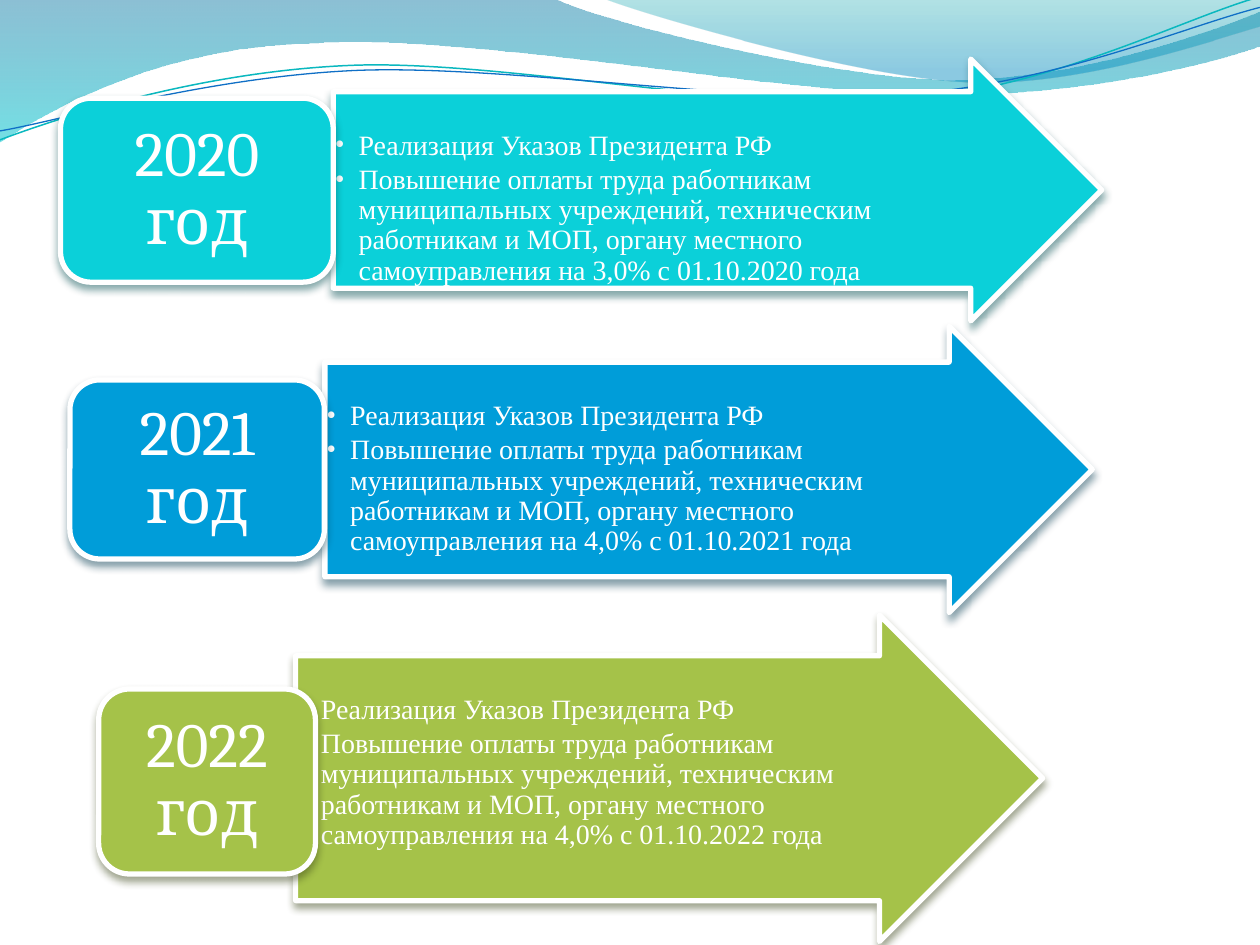
import pptx
import pptx.util
import pptx.dml.color
import pptx.enum.shapes
import pptx.enum.text
import pptx.oxml.ns
import lxml.etree

Cm, Pt = pptx.util.Cm, pptx.util.Pt
RGBColor = pptx.dml.color.RGBColor
SHAPE = pptx.enum.shapes.MSO_SHAPE
ALIGN, ANCHOR = pptx.enum.text.PP_ALIGN, pptx.enum.text.MSO_ANCHOR
qn = pptx.oxml.ns.qn
sub = lxml.etree.SubElement

WHITE = RGBColor(0xFF, 0xFF, 0xFF)
CYAN, CYAN_SHADOW = RGBColor(0x0B, 0xD0, 0xD9), RGBColor(0x02, 0x4B, 0x4E)
BLUE, BLUE_SHADOW = RGBColor(0x00, 0x9D, 0xD9), RGBColor(0x00, 0x37, 0x4C)
GREEN, GREEN_SHADOW = RGBColor(0xA5, 0xC2, 0x49), RGBColor(0x3A, 0x45, 0x19)
WAVE_BLUE, WAVE_AQUA = RGBColor(0x00, 0x74, 0xA1), RGBColor(0x00, 0xC6, 0xCF)
CREST_TEAL, CREST_BLUE = RGBColor(0x00, 0xA1, 0xA9), RGBColor(0x00, 0x8B, 0xBF)
LINE_TEAL, LINE_BLUE = RGBColor(0x0A, 0xB8, 0xBF), RGBColor(0x0F, 0x6F, 0xC6)

prs = pptx.Presentation()
prs.slide_width, prs.slide_height = Cm(25.4), Cm(19.05)
s = prs.slides.add_slide(prs.slide_layouts[6])


def add_wave(start, segments, close):
    """Outline in cm: a pair is a straight line, six numbers a Bezier curve."""
    pts = [(Cm(x), Cm(y)) for seg in segments for x, y in zip(seg[::2], seg[1::2])]
    fb = s.shapes.build_freeform(Cm(start[0]), Cm(start[1]))
    fb.add_line_segments(pts, close=close)
    sp = fb.convert_to_shape()
    sp.shadow.inherit = False
    # Join the three points of each curve into one Bezier command
    steps = iter(list(sp._element.spPr.iter(qn("a:lnTo"))))
    for seg in segments:
        step = next(steps)
        if len(seg) == 6:
            step.addprevious(curve := lxml.etree.Element(qn("a:cubicBezTo")))
            for point in (step, next(steps), next(steps)):
                curve.append(point[0])
                point.getparent().remove(point)
    return sp


def add_block(kind, box, color, shadow, frame):
    """Filled preset shape with a white outline, a soft shadow and a text frame."""
    sp = s.shapes.add_shape(kind, *[Cm(v) for v in box])
    sp.fill.solid()
    sp.fill.fore_color.rgb = color
    sp.line.color.rgb = WHITE
    sp.line.width = Pt(3)
    sp.shadow.inherit = False
    effects = sp._element.spPr.find(qn("a:effectLst"))
    outer = sub(effects, qn("a:outerShdw"), blurRad=str(Pt(4.5)), dist=str(Pt(3)),
                dir="5400000", rotWithShape="0")
    clr = sub(outer, qn("a:srgbClr"), val=str(shadow))
    sub(clr, qn("a:alpha"), val="48000")
    tf = sp.text_frame
    for name, value in frame.items():
        setattr(tf, name, value)
    return sp


# Translucent waves across the top
waves = [
    ((0, 0), [(11.18, -0.03), (12.09, 0.43, 16.87, 1.6, 19.25, 1.6),
              (21.67, 1.6, 24.33, 0.66, 25.4, 0.23), (25.43, 0.91),
              (24.97, 1.12, 22.1, 1.93, 18.95, 1.91),
              (15.8, 1.91, 9.7, 0.71, 6.53, 0.86),
              (3.28, 0.91, 1.17, 2.11, -0.03, 2.87)],
     [(0, WAVE_BLUE, 45), (1, WAVE_AQUA, 55)]),
    ((12.17, -0.03), [(12.93, 0.28, 17.32, 1.57, 19.53, 1.65),
                      (21.74, 1.75, 24.41, 0.81, 25.4, 0.53), (25.4, 0)],
     [(0, CREST_TEAL, 30), (0.8, CREST_BLUE, 45)]),
]
for start, segments, stops in waves:
    sp = add_wave(start, segments, True)
    sp.line.fill.background()
    sp.fill.gradient()
    sp.fill.gradient_angle = 270
    for stop, (pos, color, _) in zip(sp.fill.gradient_stops, stops):
        stop.position = pos
        stop.color.rgb = color
    for clr, (_, _, opacity) in zip(sp._element.spPr.iter(qn("a:srgbClr")), stops):
        sub(clr, qn("a:alpha"), val=str(opacity * 1000))

# Thin wavy lines
lines = [
    ((0, 2.82), [(1.22, 2.36, 4.01, 1.45, 7.04, 1.32),
                 (10.03, 1.19, 15.06, 2.26, 18.11, 2.03),
                 (21.16, 1.8, 23.83, 0.38, 25.35, -0.05)], LINE_TEAL, 0.85),
    ((0, 2.64), [(1.19, 2.44, 4.17, 1.55, 7.19, 1.42),
                 (10.24, 1.3, 15.19, 2.13, 18.21, 1.91),
                 (21.23, 1.7, 23.9, 0.53, 25.4, 0.15)], LINE_BLUE, 0.75),
]
for start, segments, color, width in lines:
    sp = add_wave(start, segments, False)
    sp.fill.background()
    sp.line.color.rgb = color
    sp.line.width = Pt(width)

# One arrow with measures and one year label per row
rows = [
    (2020, "3,0%", CYAN, CYAN_SHADOW, (6.72, 1.19, 15.49, 5.28), (1.22, 1.98, 5.5, 3.71)),
    (2021, "4,0%", BLUE, BLUE_SHADOW, (6.55, 6.58, 15.47, 5.77), (1.41, 7.66, 5.13, 3.61)),
    (2022, "4,0%", GREEN, GREEN_SHADOW, (5.96, 12.4, 15.06, 6.58), (1.99, 13.89, 4.37, 3.73)),
]
arrow_frame = {"word_wrap": True, "vertical_anchor": ANCHOR.TOP, "margin_left": Cm(0.03),
               "margin_right": Cm(0.03), "margin_top": Cm(0.79), "margin_bottom": Cm(0.03)}
label_frame = {"word_wrap": True, "vertical_anchor": ANCHOR.MIDDLE, "margin_left": Cm(0.38),
               "margin_right": Cm(0.38), "margin_top": Cm(0.18), "margin_bottom": Cm(0.18)}
arrow_font = {"name": "Times New Roman", "size": Pt(16)}
label_font = {"name": "Cambria", "size": Pt(36)}

for year, raise_pct, color, shadow, arrow_box, label_box in rows:
    arrow = add_block(SHAPE.RIGHT_ARROW, arrow_box, color, shadow, arrow_frame)
    arrow.adjustments[0], arrow.adjustments[1] = 0.75, 0.5
    arrow.text_frame.text = (
        "Реализация Указов Президента РФ\n"
        "Повышение оплаты труда работникам муниципальных учреждений, техническим "
        "работникам и МОП, органу местного самоуправления "
        f"на {raise_pct} с 01.10.{year} года")
    label = add_block(SHAPE.ROUNDED_RECTANGLE, label_box, color, shadow, label_frame)
    label.text_frame.text = f"{year} год"

    for sp, font, align, after in ((arrow, arrow_font, ALIGN.LEFT, 2.4),
                                   (label, label_font, ALIGN.CENTER, 0)):
        for p in sp.text_frame.paragraphs:
            p.alignment, p.line_spacing, p.space_after = align, 0.9, Pt(after)
            r = p.runs[0]
            r.font.color.rgb = WHITE
            for name, value in font.items():
                setattr(r.font, name, value)

    # Bullets with a hanging indent
    for p in arrow.text_frame.paragraphs:
        p.level = 1
        pPr = p._p.get_or_add_pPr()
        pPr.set("marL", str(Cm(0.48)))
        pPr.set("indent", str(-Cm(0.48)))
        sub(pPr, qn("a:buFont"), typeface="Times New Roman")
        sub(pPr, qn("a:buChar"), char="•")

prs.save("out.pptx")
